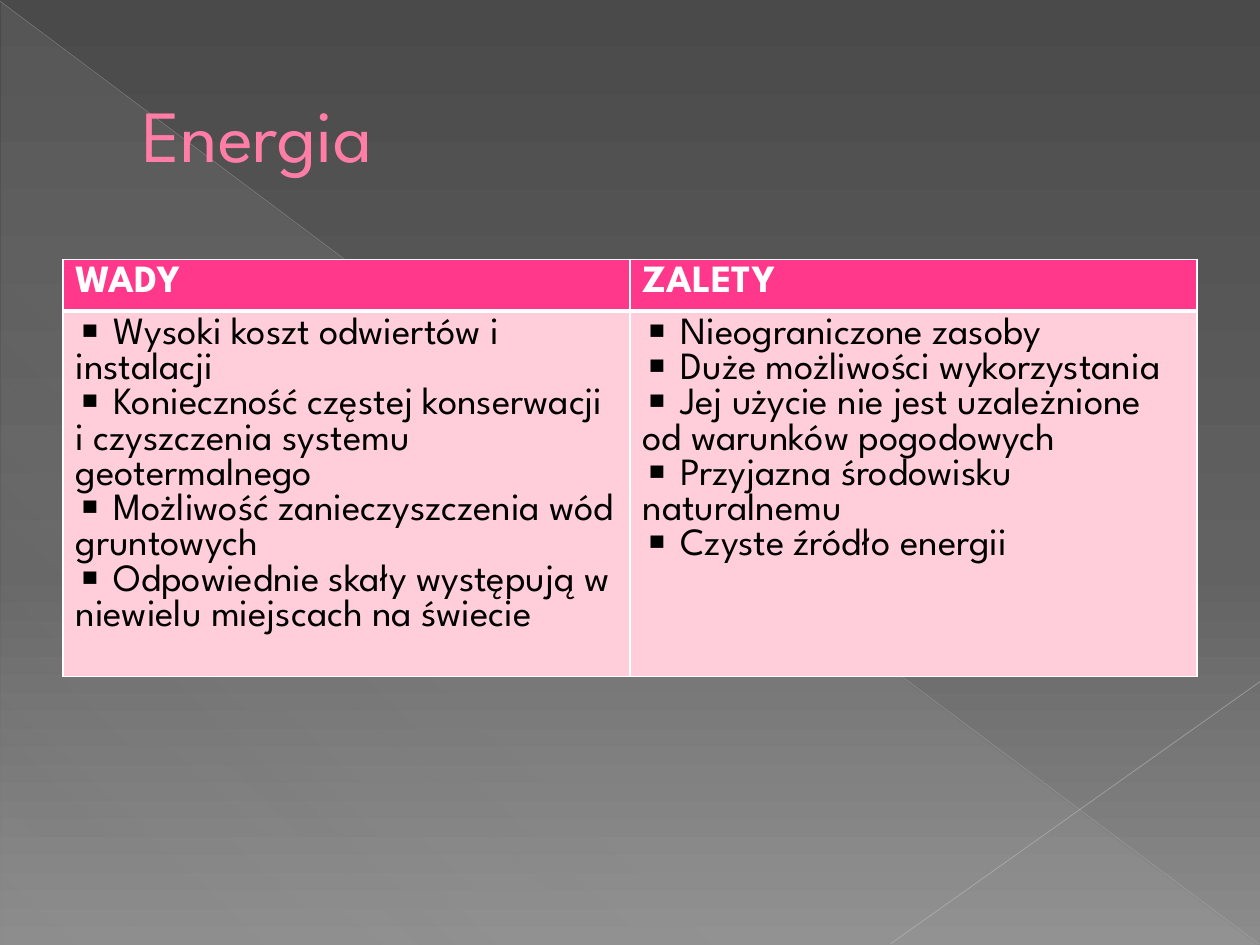
import dataclasses

import pptx
import pptx.dml.color
import pptx.enum.shapes
import pptx.enum.text
import pptx.oxml
import pptx.oxml.ns
import pptx.util

qn = pptx.oxml.ns.qn
NAMESPACE = pptx.oxml.ns.nsdecls("a")


@dataclasses.dataclass(frozen=True)
class Theme:
    font: str = "League Spartan"
    title_size: float = 42
    table_size: float = 22
    title: str = "FF7DA7"
    title_outline: str = "B12761"
    header_fill: str = "FF388C"
    header_text: str = "FFFFFF"
    body_fill: str = "FFCEDA"
    body_text: str = "000000"
    border: str = "FFFFFF"
    background: tuple = ((0, "4A4A4A", 100), (60, "626262", 100), (100, "8C8C8C", 100))
    sheen: tuple = ((0, "D2D2D2", 10), (70, "D2D2D2", 8), (100, "D2D2D2", 1))
    falling_line: tuple = ("BFBFBF", 0.39, 35)
    rising_line: tuple = ("C6C6C6", 0.47, 45)


def color_xml(color, opacity=100):
    return f'<a:srgbClr val="{color}"><a:alpha val="{opacity * 1000}"/></a:srgbClr>'


def line_xml(tag, color, width):
    return pptx.oxml.parse_xml(
        f'<a:{tag} {NAMESPACE} w="{pptx.util.Pt(width)}">'
        f"<a:solidFill>{color_xml(color)}</a:solidFill></a:{tag}>"
    )


def set_values(target, values):
    for name, value in values.items():
        setattr(target, name, value)


class SlideBuilder:
    COLUMNS, ROWS = 20, 15

    def __init__(self, presentation, theme):
        self.theme = theme
        self.column = presentation.slide_width / self.COLUMNS
        self.row = presentation.slide_height / self.ROWS
        self.slide = presentation.slides.add_slide(presentation.slide_layouts[5])

    def place(self, column, row):
        return round(column * self.column), round(row * self.row)

    def format_run(self, run, size, color, bold=False):
        set_values(run.font, {"name": self.theme.font, "size": pptx.util.Pt(size), "bold": bold})
        run.font.color.rgb = pptx.dml.color.RGBColor.from_string(color)

    def gradient(self, fill, owner, stops, angle):
        fill.gradient()
        stop_xml = "".join(
            f'<a:gs pos="{position * 1000}">{color_xml(color, opacity)}</a:gs>'
            for position, color, opacity in stops
        )
        gradient = pptx.oxml.parse_xml(
            f'<a:gradFill {NAMESPACE} rotWithShape="1"><a:gsLst>{stop_xml}</a:gsLst>'
            f'<a:lin ang="{angle * 60000}" scaled="0"/></a:gradFill>'
        )
        previous = owner.find(".//" + qn("a:gradFill"))
        previous.getparent().replace(previous, gradient)

    def background(self):
        self.gradient(self.slide.background.fill, self.slide.element, self.theme.background, 90)

    def sheen(self, position, size):
        shape = self.slide.shapes.add_shape(
            pptx.enum.shapes.MSO_SHAPE.RIGHT_TRIANGLE, *self.place(*position), *self.place(*size)
        )
        shape.shadow.inherit = False
        shape.line.fill.background()
        self.gradient(shape.fill, shape.element, self.theme.sheen, 133)

    def line(self, start, end, style):
        color, width, opacity = style
        connector = self.slide.shapes.add_connector(
            pptx.enum.shapes.MSO_CONNECTOR.STRAIGHT, *self.place(*start), *self.place(*end)
        )
        connector.line.width = pptx.util.Pt(width)
        connector.line.color.rgb = pptx.dml.color.RGBColor.from_string(color)
        color_element = connector.element.spPr.find(".//" + qn("a:srgbClr"))
        color_element.append(
            pptx.oxml.parse_xml(f'<a:alpha {NAMESPACE} val="{opacity * 1000}"/>')
        )
        connector.element.spPr.append(pptx.oxml.parse_xml(f"<a:effectLst {NAMESPACE}/>"))

    def title(self, text, position, size):
        title = self.slide.shapes.title
        self.slide.shapes.element.append(title.element)
        left, top = self.place(*position)
        width, height = self.place(*size)
        set_values(title, {"left": left, "top": top, "width": width, "height": height})
        frame = title.text_frame
        frame.text = text
        set_values(frame, {
            "vertical_anchor": pptx.enum.text.MSO_ANCHOR.MIDDLE,
            "auto_size": pptx.enum.text.MSO_AUTO_SIZE.NONE,
            "word_wrap": True,
        })
        paragraph = frame.paragraphs[0]
        paragraph.alignment = pptx.enum.text.PP_ALIGN.LEFT
        set_values(paragraph._p.get_or_add_pPr(), {"marL": pptx.util.Inches(0.53), "indent": 0})
        paragraph._p.pPr.set("marL", str(pptx.util.Inches(0.53)))
        paragraph._p.pPr.set("indent", "0")
        run = paragraph.runs[0]
        self.format_run(run, self.theme.title_size, self.theme.title)
        run.font._element.insert(0, line_xml("ln", self.theme.title_outline, 0.5))

    def cell(self, cell, lines, fill, color, top, bottom, bold=False, bullet=None):
        properties = cell._tc.get_or_add_tcPr()
        for tag, width in {"lnL": 1, "lnR": 1, "lnT": top, "lnB": bottom}.items():
            properties.append(line_xml(tag, self.theme.border, width))
        cell.fill.solid()
        cell.fill.fore_color.rgb = pptx.dml.color.RGBColor.from_string(fill)
        cell.text = "\n".join(lines)
        for paragraph in cell.text_frame.paragraphs:
            self.format_run(paragraph.runs[0], self.theme.table_size, color, bold)
            if bullet:
                paragraph._p.get_or_add_pPr().append(
                    pptx.oxml.parse_xml(f'<a:buChar {NAMESPACE} char="{bullet}"/>')
                )

    def table(self, content, position, width, row_heights):
        size = self.place(width, sum(row_heights))
        table = self.slide.shapes.add_table(
            2, len(content), *self.place(*position), *size
        ).table
        for row, height in zip(table.rows, row_heights):
            row.height = round(height * self.row)
        theme = self.theme
        for index, (heading, points) in enumerate(content.items()):
            self.cell(table.cell(0, index), [heading], theme.header_fill,
                      theme.header_text, 1, 3, bold=True)
            self.cell(table.cell(1, index), [f" {point}" for point in points],
                      theme.body_fill, theme.body_text, 3, 1, bullet="▪")


def main():
    presentation = pptx.Presentation()
    set_values(presentation, {
        "slide_width": pptx.util.Inches(10),
        "slide_height": pptx.util.Inches(7.5),
    })
    theme = Theme()
    builder = SlideBuilder(presentation, theme)
    builder.background()
    builder.sheen((0.02, 0.04), (19.96, 14.96))
    builder.line((0, 0.02), (19.98, 14.98), theme.falling_line)
    builder.line((20, 10.82), (14.14, 14.98), theme.rising_line)
    builder.title("Energia", (1, 0.58), (18, 3.06))
    builder.table(
        {
            "WADY": [
                "Wysoki koszt odwiertów i instalacji",
                "Konieczność częstej konserwacji i czyszczenia systemu geotermalnego",
                "Możliwość zanieczyszczenia wód gruntowych",
                "Odpowiednie skały występują w niewielu miejscach na świecie",
            ],
            "ZALETY": [
                "Nieograniczone zasoby",
                "Duże możliwości wykorzystania",
                "Jej użycie nie jest uzależnione od warunków pogodowych",
                "Przyjazna środowisku naturalnemu",
                "Czyste źródło energii",
            ],
        },
        (1, 4.12), 18, (0.82, 5.8),
    )
    presentation.save("out.pptx")


if __name__ == "__main__":
    main()
